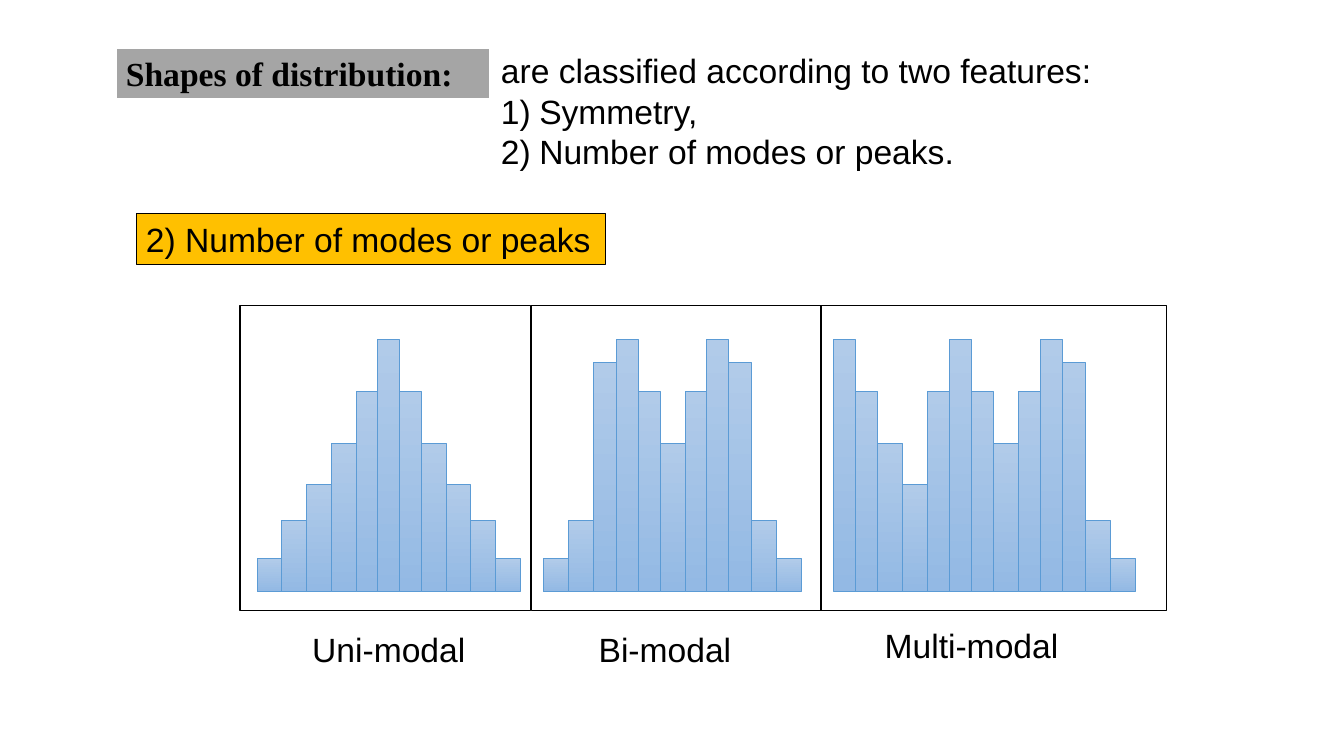
from pptx import Presentation, util as u
from pptx.dml.color import RGBColor
from pptx.enum import shapes, text
from pptx.oxml.ns import qn
from lxml import etree

PX = 9144
BLACK = RGBColor(0x00, 0x00, 0x00)
WHITE = RGBColor(0xFF, 0xFF, 0xFF)
GREY = RGBColor(0xA5, 0xA5, 0xA5)
AMBER = RGBColor(0xFF, 0xC0, 0x00)
BAR_TOP = RGBColor(0xB1, 0xCB, 0xE9)
BAR_BOTTOM = RGBColor(0x93, 0xB9, 0xE4)
BAR_LINE = RGBColor(0x5B, 0x9B, 0xD5)

BAR_WIDTHS = {199: 22, 227: 23, 250: 22}
WIDE_BAR = 25
PANELS = [
    ("Uni-modal", (238, 303, 288, 303), (17, 261), (248, 619),
     [33, 71, 106, 147, 199, 250, 199, 147, 106, 71, 33]),
    ("Bi-modal", (527, 303, 288, 303), (12, 256), (522, 619),
     [33, 71, 227, 250, 199, 147, 199, 250, 227, 71, 33]),
    ("Multi-modal", (814, 303, 343, 303), (13, 299), (826, 615),
     [250, 199, 147, 106, 199, 250, 199, 147, 199, 250, 227, 71, 33]),
]


def emu(box):
    """Turn px lengths into EMU."""
    return [u.Emu(round(length * PX)) for length in box]


def add_rectangle(parent, box, line, weight, fill=None):
    """Add a shadowless rectangle, unfilled unless a colour is given."""
    shape = parent.add_shape(shapes.MSO_SHAPE.RECTANGLE, *emu(box))
    shape.shadow.inherit = False
    shape.line.color.rgb = line
    shape.line.width = u.Pt(weight)
    if fill is None:
        shape.fill.background()
    else:
        shape.fill.solid()
        shape.fill.fore_color.rgb = fill
    return shape


def write(shape, lines, font="Arial", bold=False, align=text.PP_ALIGN.LEFT, wrap=True):
    """Write one paragraph per line, from the top of the shape."""
    frame = shape.text_frame
    frame.word_wrap = wrap
    frame.vertical_anchor = text.MSO_ANCHOR.TOP
    frame.text = "\n".join(lines)
    for paragraph in frame.paragraphs:
        paragraph.alignment = align
        paragraph.font.name = font
        paragraph.font.size = u.Pt(24)
        paragraph.font.bold = bold
        paragraph.font.color.rgb = BLACK


def number(paragraph, indent):
    """Give a paragraph an automatic number with a hanging indent."""
    properties = paragraph._p.get_or_add_pPr()
    properties.set("marL", str(indent * PX))
    properties.set("indent", str(-indent * PX))
    bullet = etree.Element(qn("a:buAutoNum"), type="arabicParenR")
    properties.insert(0, bullet)


def add_heading(slide, box):
    """Add the grey title and the numbered features beside it."""
    left, top, width, height = box
    title = add_rectangle(slide.shapes, (left, top, 371, 50), WHITE, 1.5, GREY)
    write(title, ["Shapes of distribution:"], "Times New Roman", True)
    features = slide.shapes.add_textbox(*emu((left + 372, top - 3, width - 372, height)))
    write(features, ["are classified according to two features:", "Symmetry,",
                     "Number of modes or peaks."], wrap=False)
    for paragraph in features.text_frame.paragraphs[1:]:
        number(paragraph, 38)


def add_bars(slide, left, baseline, span, heights):
    """Fill a span with adjoining bars that stand on a baseline."""
    group = slide.shapes.add_group_shape()
    widths = [BAR_WIDTHS.get(height, WIDE_BAR) for height in heights]
    scale = span / sum(widths)
    for width, height in zip(widths, heights):
        box = (left, baseline - height, width * scale, height)
        bar = add_rectangle(group.shapes, box, BAR_LINE, 0.5)
        bar.fill.gradient()
        bar.fill.gradient_angle = 270
        for stop, color in zip(bar.fill.gradient_stops, (BAR_TOP, BAR_BOTTOM)):
            stop.color.rgb = color
        left += width * scale


def add_panel(slide, box, name, bars, label_at, heights):
    """Add a framed histogram with its name below."""
    left, top, width, height = box
    offset, span = bars
    add_rectangle(slide.shapes, box, BLACK, 1)
    add_bars(slide, left + offset, top + height - 19, span, heights)
    label = slide.shapes.add_textbox(*emu((*label_at, 275, 42)))
    write(label, [name], align=text.PP_ALIGN.CENTER)


def main():
    """Build and save the slide."""
    presentation = Presentation()
    presentation.slide_width, presentation.slide_height = emu((1333, 750))
    slide = presentation.slides.add_slide(presentation.slide_layouts[6])
    add_heading(slide, (115, 48, 984, 131))
    section = add_rectangle(slide.shapes, (135, 212, 466, 50), BLACK, 0.75, AMBER)
    write(section, ["2) Number of modes or peaks"], wrap=False)
    for name, box, bars, label_at, heights in PANELS:
        add_panel(slide, box, name, bars, label_at, heights)
    presentation.save("out.pptx")


if __name__ == "__main__":
    main()
